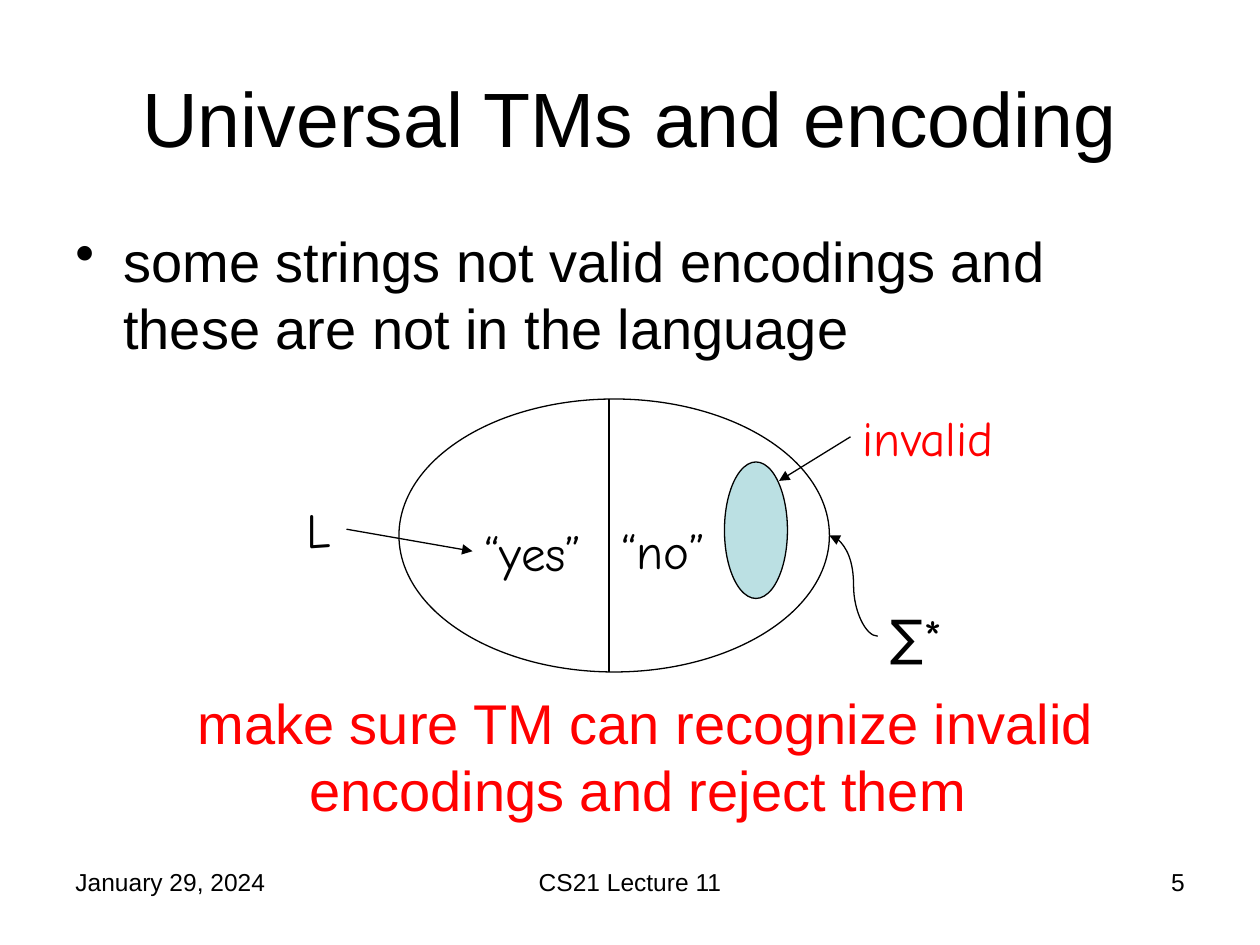
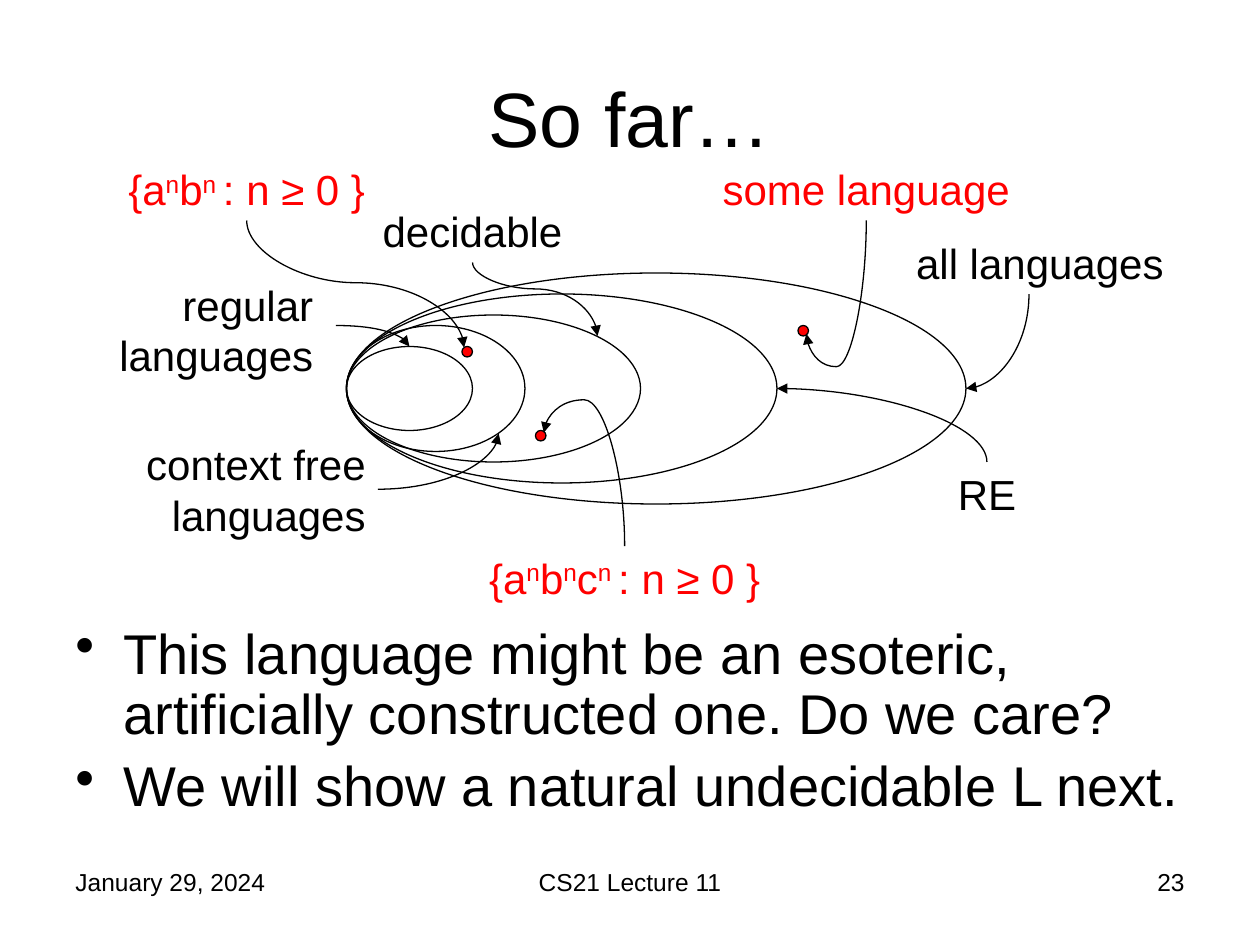
from dataclasses import dataclass
from typing import Any

from pptx import Presentation
from pptx.dml.color import RGBColor
from pptx.enum.shapes import MSO_CONNECTOR as Link, MSO_SHAPE as Preset
from pptx.enum.text import MSO_ANCHOR as Anchor, PP_ALIGN as Align
from pptx.oxml.ns import qn
from pptx.oxml.xmlchemy import OxmlElement
from pptx.util import Inches, Pt

COLUMNS, ROWS = 120, 90
CELL = Inches(10) / COLUMNS
BLACK, RED, PALE_TEAL = "000000", "FF0000", "BBE0E3"
SANS, HAND = "Arial", "Comic Neue"
LEFT, CENTER, RIGHT = Align.LEFT, Align.CENTER, Align.RIGHT
LECTURE_DATE, LECTURE = "January 29, 2024", "CS21 Lecture 11"


def color(hex_code):
    """Turn a hex string into a colour."""
    return RGBColor.from_string(hex_code)


def child(parent, tag, **attributes):
    """Append an XML element with attributes and return it."""
    element = OxmlElement(tag)
    for name, value in attributes.items():
        element.set(name, value)
    parent.append(element)
    return element


def add_bullet(paragraph):
    """Give a paragraph a hanging bullet."""
    properties = paragraph._p.get_or_add_pPr()
    properties.set("marL", str(Inches(0.38)))
    properties.set("indent", str(-Inches(0.38)))
    child(properties, "a:buChar", char="•")


@dataclass
class Region:
    """A box on the slide grid that places parts relative to its corner."""

    slide: Any
    left: float
    top: float
    width: float
    height: float

    def point(self, column, row):
        """Convert a grid position in the region to slide lengths."""
        return round((self.left + column) * CELL), round((self.top + row) * CELL)

    def frame(self, column, row, width, height):
        """Convert a grid box in the region to slide lengths."""
        return *self.point(column, row), round(width * CELL), round(height * CELL)

    def text(self, words, box=None, size=24, hue=BLACK, font=SANS,
             align=LEFT, anchor=Anchor.TOP):
        """Write text whose parts between carets are superscripts."""
        box = box or (0, 0, self.width, self.height)
        frame = self.slide.shapes.add_textbox(*self.frame(*box)).text_frame
        frame.word_wrap = True
        frame.vertical_anchor = anchor
        for index, line in enumerate(words.split("\n")):
            paragraph = frame.add_paragraph() if index else frame.paragraphs[0]
            paragraph.alignment = align
            for order, part in enumerate(line.split("^")):
                run = paragraph.add_run()
                run.text = part
                run.font.size, run.font.name = Pt(size), font
                run.font.color.rgb = color(hue)
                if order % 2:
                    run.font._element.set("baseline", "30000")
        return frame

    def ellipse(self, box, fill=None):
        """Draw an outlined ellipse, filled or open."""
        oval = self.slide.shapes.add_shape(Preset.OVAL, *self.frame(*box))
        oval.shadow.inherit = False
        oval.line.color.rgb, oval.line.width = color(BLACK), Pt(0.75)
        if fill:
            oval.fill.solid()
            oval.fill.fore_color.rgb = color(fill)
        else:
            oval.fill.background()

    def line(self, start, end, kind=Link.STRAIGHT, arrow=True):
        """Draw a thin connector, with an arrowhead unless told otherwise."""
        connector = self.slide.shapes.add_connector(
            kind, *self.point(*start), *self.point(*end))
        connector.line.color.rgb, connector.line.width = color(BLACK), Pt(0.75)
        properties = connector._element.spPr
        if arrow:
            child(connector.line._get_or_add_ln(), "a:tailEnd", type="triangle")
        child(properties, "a:effectLst")
        return properties

    def curve(self, start, end, vertical=True, bend=None):
        """Draw a curved arrow: an arc, or an S when a bend share is given."""
        (x1, y1), (x2, y2) = start, end
        dx, dy = x2 - x1, y2 - y1
        if vertical:
            middle_x, middle_y = (x1 + x2) / 2, (y1 + y2) / 2
            reach = abs(dy) / 2 * (1 if (dx < 0) == (dy > 0) else -1)
            start = middle_x - reach, middle_y - abs(dx) / 2
            end = middle_x + reach, middle_y + abs(dx) / 2
        properties = self.line(start, end, Link.CURVE)
        if vertical:
            turn = 90 if dx < 0 else 270
            properties.find(qn("a:xfrm")).set("rot", str(turn * 60000))
        geometry = properties.find(qn("a:prstGeom"))
        if bend is None:
            geometry.set("prst", "curvedConnector2")
        else:
            guides = geometry.find(qn("a:avLst"))
            if guides is None:
                guides = child(geometry, "a:avLst")
            child(guides, "a:gd", name="adj1", fmla=f"val {round(bend * 100000)}")


def lecture_slide(deck, title, number):
    """Add a slide with the shared title and footer."""
    slide = deck.slides.add_slide(deck.slide_layouts[6])
    Region(slide, 6, 3.6, 108, 15).text(
        title, size=44, align=CENTER, anchor=Anchor.MIDDLE)
    footer = Region(slide, 6, 82, 108, 6.25)
    for words, column, width, align in (
        (LECTURE_DATE, 0, 28, LEFT),
        (LECTURE, 35, 38, CENTER),
        (str(number), 80, 28, RIGHT),
    ):
        footer.text(words, (column, 0, width, 6.25), size=14, align=align)
    return slide


def bullet_list(region, points, spacing=1.0):
    """Fill a region with bulleted points."""
    for paragraph in region.text("\n".join(points), size=32).paragraphs:
        paragraph.line_spacing = spacing
        paragraph.space_before = Pt(6.4)
        add_bullet(paragraph)


def encoding_diagram(region):
    """Show all strings split into yes, no and invalid ones."""
    region.ellipse((10, 0, 41, 26))
    region.line((30, 0), (30, 26), arrow=False)
    region.ellipse((41, 6, 6, 13), PALE_TEAL)
    for words, column, row, width, hue in (
        ("∑*", 55.6, 19.2, 9, BLACK),
        ("“yes”", 17, 11.2, 18, BLACK),
        ("“no”", 30, 11, 12, BLACK),
        ("L", 0, 9, 5, BLACK),
        ("invalid", 53, 0.2, 19, RED),
    ):
        region.text(words, (column, row, width, 6.8), 28, hue, HAND)
    region.line((5, 12.4), (17, 14.5))
    region.line((53, 3.6), (46.2, 7.8))
    region.curve((55.6, 22.6), (51, 13), vertical=False, bend=0.5)


def language_classes(region):
    """Show the nested language classes with their labels and examples."""
    edge, axis = 27, 22
    for width, height in ((59, 22), (41, 18), (28, 14), (17, 12), (12, 8)):
        region.ellipse((edge, axis - height / 2, width, height))
    for column, row in ((38, 18), (45, 26), (70, 16)):
        region.ellipse((column, row, 1, 1), RED)

    for words, column, row, width, align in (
        ("regular languages", 3, 11, 22, RIGHT),
        ("context free languages", 2, 26.2, 28, RIGHT),
        ("all languages", 78, 7, 28, RIGHT),
        ("decidable", 25, 4, 28, CENTER),
        ("RE", 74, 29, 28, CENTER),
    ):
        region.text(words, (column, row, width, 6), align=align)
    for words, column, row in (
        ("{a^n^b^n ^: n ≥ 0 }", 0, 0),
        ("{a^n^b^n^c^n ^: n ≥ 0 }", 36, 37),
        ("some language", 59, 0),
    ):
        region.text(words, (column, row, 35, 6), hue=RED, align=CENTER)

    for start, end, vertical, bend in (
        ((26, 16), (33, 18), False, None),
        ((30, 31.6), (41.5, 26.3), False, None),
        ((92, 13), (86, axis), True, None),
        ((39, 10), (50.9, 17), True, 0.36),
        ((88, 29), (68, axis), True, None),
        ((17.5, 6), (38.2, 18.1), True, 0.49),
        ((53.5, 37), (45.8, 26.2), True, 1.29),
        ((76.5, 6), (70.8, 16.8), True, 1.29),
    ):
        region.curve(start, end, vertical, bend)


def encoding_slide(deck):
    """Build the slide on universal machines and encodings."""
    slide = lecture_slide(deck, "Universal TMs and encoding", 5)
    bullet_list(Region(slide, 6, 21, 108, 15), [
        "some strings not valid encodings and these are not in the language"])
    encoding_diagram(Region(slide, 28, 38, 72, 26))
    Region(slide, 12, 65, 99, 14).text(
        "make sure TM can recognize invalid encodings and reject them ",
        size=32, hue=RED, align=CENTER)


def summary_slide(deck):
    """Build the slide that sums up the language classes."""
    slide = lecture_slide(deck, "So far…", 23)
    language_classes(Region(slide, 6, 15, 106, 43))
    bullet_list(Region(slide, 6, 59, 108, 21.4), [
        "This language might be an esoteric, artificially constructed one. "
        "Do we care?",
        "We will show a natural undecidable L next.",
    ], spacing=0.9)


def main():
    """Build and save the lecture slides."""
    deck = Presentation()
    deck.slide_width, deck.slide_height = round(COLUMNS * CELL), round(ROWS * CELL)
    encoding_slide(deck)
    summary_slide(deck)
    deck.save("out.pptx")


if __name__ == "__main__":
    main()
